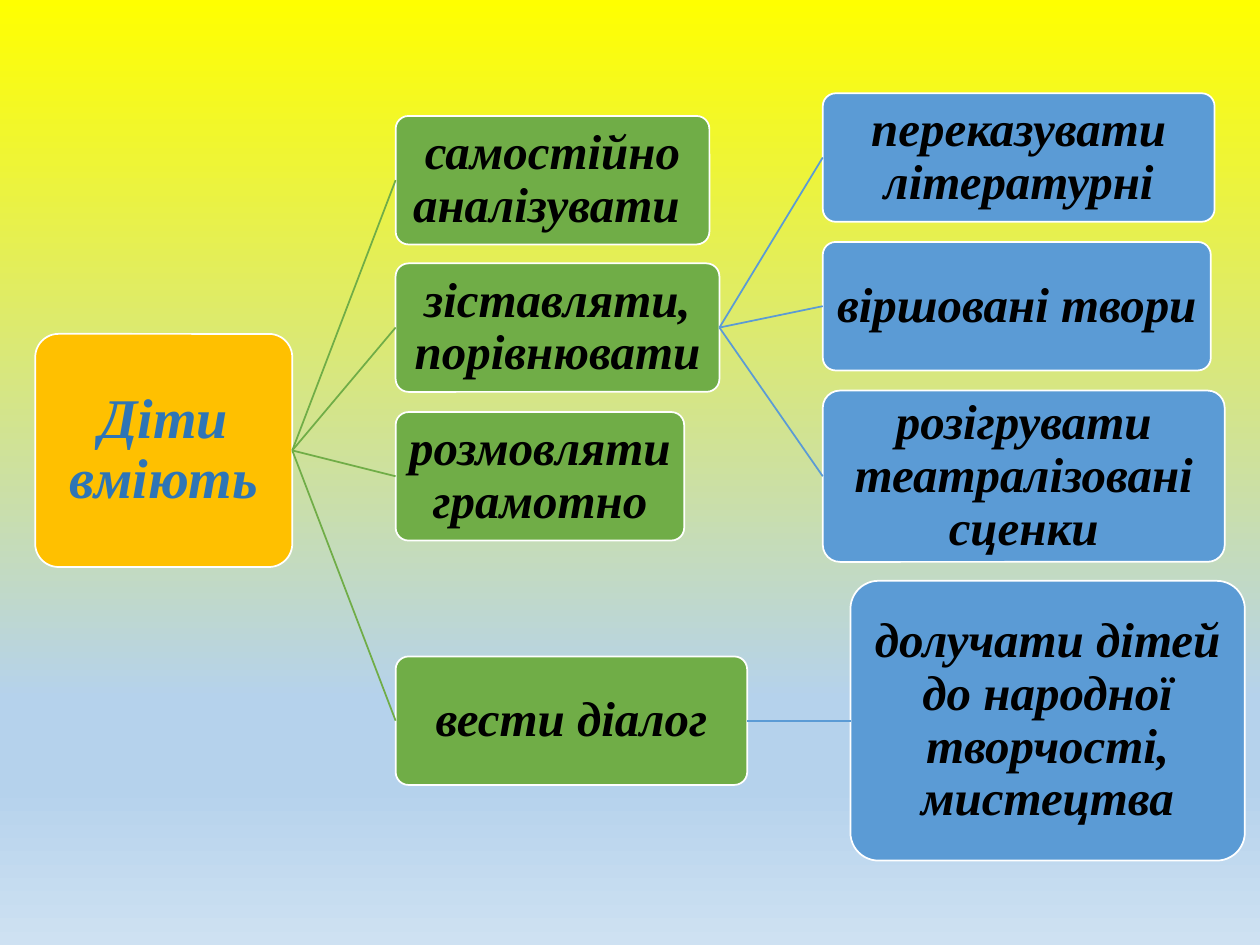
from pptx import Presentation
from pptx.dml.color import RGBColor
from pptx.enum import shapes, text
from pptx.oxml import ns, xmlchemy as xml
from pptx.util import Inches, Pt

GOLD, GREEN, BLUE = "FFC000", "70AD47", "5B9BD5"
LEFT, RIGHT = 1, 3  # connection sites of a box


def color(code):
    return RGBColor.from_string(code)


def paint(slide, stops):
    """Fill the background with a gradient running from top to bottom."""
    fill = slide.background.fill
    fill.gradient()
    fill.gradient_angle = 270
    items = next(slide.element.iter(ns.qn("a:gsLst")))
    for old in list(items):
        items.remove(old)
    for pos, code in stops:
        stop = xml.OxmlElement("a:gs")
        stop.set("pos", str(pos * 1000))
        tint = xml.OxmlElement("a:srgbClr")
        tint.set("val", code)
        stop.append(tint)
        items.append(stop)


def write(shape, words, size=28, ink="000000", font="Times New Roman"):
    frame = shape.text_frame
    frame.word_wrap = True
    frame.vertical_anchor = text.MSO_ANCHOR.MIDDLE
    frame.margin_left = frame.margin_right = Inches(0.02)
    frame.margin_top = frame.margin_bottom = Inches(0.02)
    para = frame.paragraphs[0]
    para.alignment = text.PP_ALIGN.CENTER
    para.line_spacing = 0.9
    run = para.add_run()
    run.text = words
    run.font.name, run.font.size = font, Pt(size)
    run.font.bold = run.font.italic = True
    run.font.color.rgb = color(ink)


def box(slide, words, x, y, w, h=1.02, fill=GREEN, **style):
    shape = slide.shapes.add_shape(
        shapes.MSO_SHAPE.ROUNDED_RECTANGLE,
        Inches(x), Inches(y), Inches(w), Inches(h))
    shape.adjustments[0] = 0.1
    shape.shadow.inherit = False
    shape.fill.solid()
    shape.fill.fore_color.rgb = color(fill)
    shape.line.color.rgb = color("FFFFFF")
    shape.line.width = Pt(1)
    write(shape, words, **style)
    return shape


def link(slide, start, end, ink):
    line = slide.shapes.add_connector(shapes.MSO_CONNECTOR.STRAIGHT, 0, 0, 0, 0)
    line.begin_connect(start, RIGHT)
    line.end_connect(end, LEFT)
    line.line.color.rgb = color(ink)
    line.line.width = Pt(1)
    line._element.spPr.append(xml.OxmlElement("a:effectLst"))


def main():
    deck = Presentation()
    deck.slide_width, deck.slide_height = Inches(10), Inches(7.5)
    slide = deck.slides.add_slide(deck.slide_layouts[6])
    paint(slide, [(0, "FFFF00"), (74, "B5D2EC"), (83, "B5D2EC"), (100, "CEE1F2")])

    # Root of the tree
    root = box(slide, "Діти вміють", 0.28, 2.65, 2.04, 1.85, GOLD,
               size=32, ink="2E75B6")

    # Skills: words, top, width
    skills = []
    for words, y, w in [("самостійно аналізувати ", 0.92, 2.49),
                        ("зіставляти, порівнювати", 2.09, 2.57),
                        ("розмовляти грамотно", 3.27, 2.29),
                        ("вести діалог", 5.21, 2.79)]:
        skill = box(slide, words, 3.14, y, w)
        link(slide, root, skill, GREEN)
        skills.append(skill)

    # Results: parent skill, words, left, top, width, height
    for num, words, *place in [
            (1, "переказувати літературні", 6.53, 0.74, 3.11, 1.02),
            (1, "віршовані твори", 6.53, 1.92, 3.08, 1.02),
            (1, "розігрувати театралізовані сценки", 6.53, 3.1, 3.19, 1.36),
            (3, "долучати дітей до народної творчості, мистецтва",
             6.75, 4.61, 3.13, 2.22)]:
        result = box(slide, words, *place, fill=BLUE)
        link(slide, skills[num], result, BLUE)

    deck.save("out.pptx")


if __name__ == "__main__":
    main()
